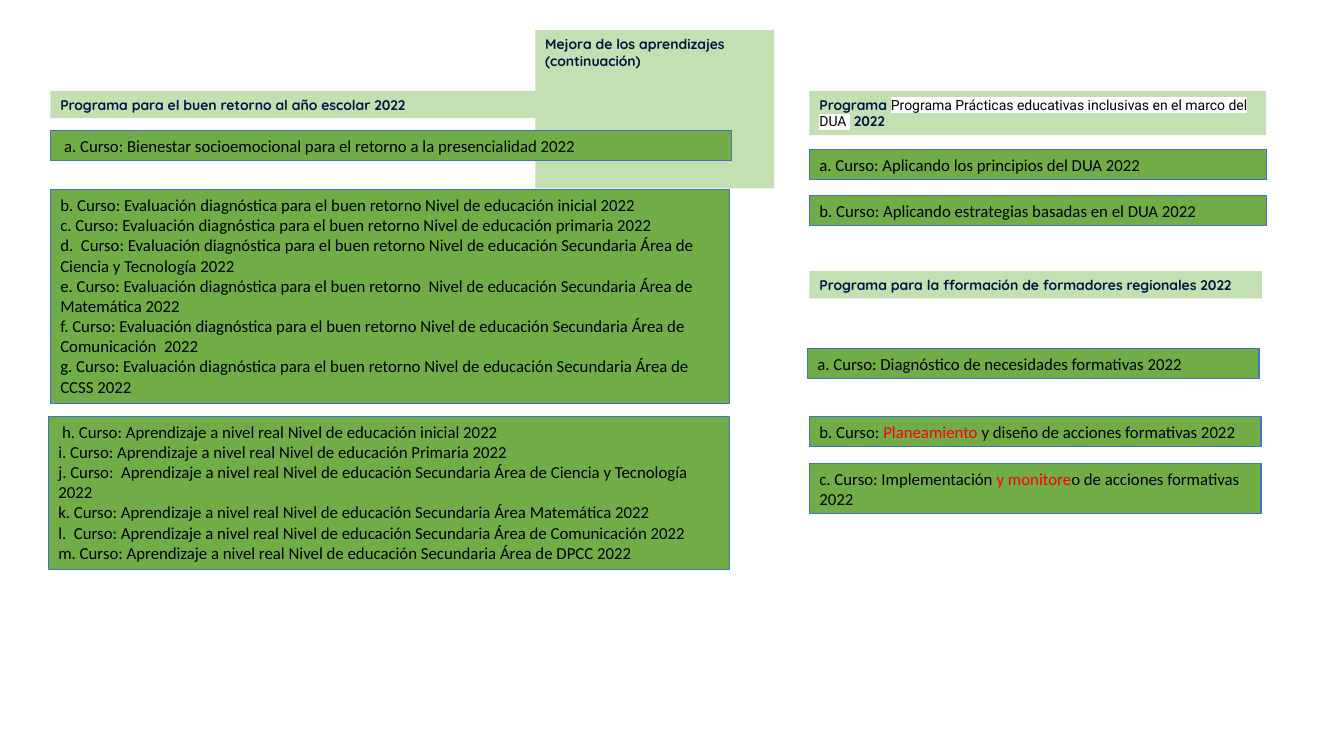
"""Build the slide listing the 2022 programmes and courses for improving learning."""
from lxml.etree import SubElement
from pptx import Presentation
from pptx.dml.color import RGBColor
from pptx.enum.shapes import MSO_SHAPE
from pptx.enum.text import MSO_ANCHOR, MSO_AUTO_SIZE, PP_ALIGN
from pptx.oxml.ns import qn
from pptx.util import Cm, Pt

COLORS = {
    "program": "C4E0B2",
    "course": "70AD47",
    "border": "4472C4",
    "navy": "011643",
    "black": "000000",
    "red": "FF0000",
    "white": "FFFFFF",
}
STYLES = {
    "program": ({"name": "Quicksand", "size": Pt(10), "bold": True}, "navy"),
    "marked": ({"name": "Roboto", "size": Pt(10), "bold": False}, "black"),
    "course": ({"name": "Calibri", "size": Pt(12), "bold": False}, "black"),
    "changed": ({"name": "Calibri", "size": Pt(12), "bold": False}, "red"),
}
FRAME_FORMAT = {
    "word_wrap": True,
    "auto_size": MSO_AUTO_SIZE.SHAPE_TO_FIT_TEXT,
    "vertical_anchor": MSO_ANCHOR.TOP,
    "margin_left": Cm(0.25),
    "margin_right": Cm(0.25),
    "margin_top": Cm(0.13),
    "margin_bottom": Cm(0.13),
}
PARAGRAPH_FORMAT = {
    "alignment": PP_ALIGN.LEFT,
    "line_spacing": 1.0,
    "space_before": Pt(0),
    "space_after": Pt(0),
}

TITLE = ["Mejora de los aprendizajes (continuación)"]
TITLE_BOX = (13.49, 0.76, 6.02, 1.12)
LEFT, RIGHT = 1.27, 20.4
PROGRAMS = [
    ((LEFT, 2.29, 17.17, 0.69), ["Programa para el buen retorno al año escolar 2022"]),
    ((RIGHT, 2.29, 11.51, 1.12), [[
        ("Programa ", "program"),
        ("Programa Prácticas educativas inclusivas en el marco del DUA ", "marked"),
        (" 2022", "program"),
    ]]),
    ((RIGHT, 6.83, 11.4, 0.69), ["Programa para la fformación de formadores regionales 2022"]),
]
COURSES = [
    ((LEFT, 3.28, 17.17, 0.76), [
        " a. Curso: Bienestar socioemocional para el retorno a la presencialidad 2022",
    ]),
    ((LEFT, 4.78, 17.12, 5.38), [
        "b. Curso: Evaluación diagnóstica para el buen retorno Nivel de educación inicial 2022",
        "c. Curso: Evaluación diagnóstica para el buen retorno Nivel de educación primaria 2022",
        "d.  Curso: Evaluación diagnóstica para el buen retorno Nivel de educación Secundaria Área de Ciencia y Tecnología 2022",
        "e. Curso: Evaluación diagnóstica para el buen retorno  Nivel de educación Secundaria Área de Matemática 2022",
        "f. Curso: Evaluación diagnóstica para el buen retorno Nivel de educación Secundaria Área de Comunicación  2022",
        "g. Curso: Evaluación diagnóstica para el buen retorno Nivel de educación Secundaria Área de CCSS 2022",
    ]),
    ((1.22, 10.49, 17.17, 3.86), [
        " h. Curso: Aprendizaje a nivel real Nivel de educación inicial 2022",
        "i. Curso: Aprendizaje a nivel real Nivel de educación Primaria 2022",
        "j. Curso:  Aprendizaje a nivel real Nivel de educación Secundaria Área de Ciencia y Tecnología 2022",
        "k. Curso: Aprendizaje a nivel real Nivel de educación Secundaria Área Matemática 2022",
        "l.  Curso: Aprendizaje a nivel real Nivel de educación Secundaria Área de Comunicación 2022",
        "m. Curso: Aprendizaje a nivel real Nivel de educación Secundaria Área de DPCC 2022",
    ]),
    ((RIGHT, 3.76, 11.53, 0.76), ["a. Curso: Aplicando los principios del DUA 2022"]),
    ((RIGHT, 4.93, 11.53, 0.76), ["b. Curso: Aplicando estrategias basadas en el DUA 2022"]),
    ((20.35, 8.79, 11.38, 0.76), ["a. Curso: Diagnóstico de necesidades formativas 2022"]),
    ((RIGHT, 10.49, 11.38, 0.76), [[
        ("b. Curso: ", "course"),
        ("Planeamiento ", "changed"),
        ("y diseño de acciones formativas 2022", "course"),
    ]]),
    ((RIGHT, 11.68, 11.38, 1.27), [[
        ("c. Curso: Implementación ", "course"),
        ("y monitore", "changed"),
        ("o de acciones formativas 2022", "course"),
    ]]),
]


def rgb(color):
    return RGBColor.from_string(COLORS[color])


def apply(target, values):
    for attribute, value in values.items():
        setattr(target, attribute, value)


def add_run(paragraph, words, style):
    run = paragraph.add_run()
    run.text = words
    font_format, color = STYLES[style]
    run.font.color.rgb = rgb(color)
    if style == "marked":
        highlight = SubElement(run.font._element, qn("a:highlight"))
        SubElement(highlight, qn("a:srgbClr"), val=COLORS["white"])
    apply(run.font, font_format)


def fill_box(box, lines, kind):
    box.fill.solid()
    box.fill.fore_color.rgb = rgb(kind)
    frame = box.text_frame
    apply(frame, FRAME_FORMAT)
    for index, line in enumerate(lines):
        paragraph = frame.add_paragraph() if index else frame.paragraphs[0]
        apply(paragraph, PARAGRAPH_FORMAT)
        for words, style in [(line, kind)] if isinstance(line, str) else line:
            add_run(paragraph, words, style)


def add_box(slide, place, lines, kind):
    box = slide.shapes.add_shape(MSO_SHAPE.RECTANGLE, *map(Cm, place))
    box.shadow.inherit = False
    if kind == "course":
        box.line.color.rgb = rgb("border")
        box.line.width = Pt(0.75)
    else:
        box.line.fill.background()
    fill_box(box, lines, kind)


def main():
    deck = Presentation()
    deck.slide_width, deck.slide_height = Cm(33.87), Cm(19.05)
    slide = deck.slides.add_slide(deck.slide_layouts[5])
    title = slide.shapes.title
    apply(title, dict(zip(("left", "top", "width", "height"), map(Cm, TITLE_BOX))))
    fill_box(title, TITLE, "program")
    for kind, boxes in (("program", PROGRAMS), ("course", COURSES)):
        for place, lines in boxes:
            add_box(slide, place, lines, kind)
    deck.save("out.pptx")


if __name__ == "__main__":
    main()
